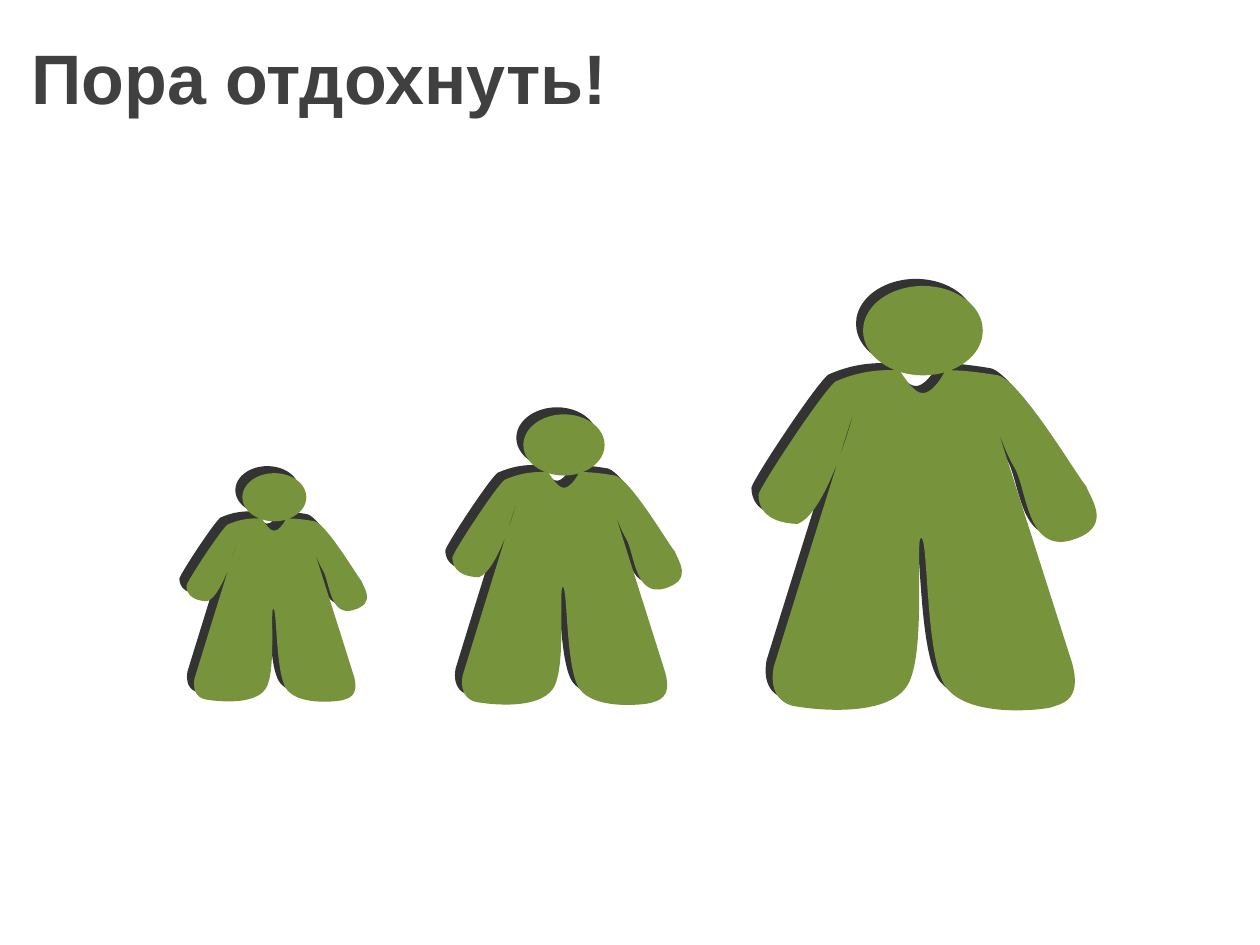
import dataclasses

import lxml.etree
import pptx
import pptx.dml.color
import pptx.enum.shapes
import pptx.enum.text
import pptx.oxml.ns
import pptx.util

Cm = pptx.util.Cm
qn = pptx.oxml.ns.qn

GREEN = "77933C"
GREY = "404040"
SHADE = "333333"
WIDE, HIGH = 283, 275
START = (148, 1)
CURVES = [
    ((145, 9), (136, 20), (130, 19)),
    ((124, 19), (117, 9), (112, 1)),
    ((92, 0), (77, 3), (61, 10)),
    ((50, 19), (0, 95), (0, 100)),
    ((0, 106), (2, 122), (31, 123)),
    ((55, 114), (76, 33), (76, 33)),
    ((69, 53), (12, 237), (12, 237)),
    ((8, 260), (21, 267), (30, 268)),
    ((48, 271), (100, 276), (117, 253)),
    ((134, 231), (124, 134), (129, 134)),
    ((135, 134), (132, 230), (149, 253)),
    ((166, 275), (214, 272), (231, 269)),
    ((240, 266), (257, 264), (249, 234)),
    ((249, 234), (185, 33), (185, 33)),
    ((177, 7), (192, 61), (203, 78)),
    ((213, 95), (213, 146), (248, 136)),
    ((282, 126), (264, 104), (260, 93)),
    ((254, 87), (209, 10), (190, 5)),
    ((161, 0), (148, 1), (148, 1)),
]
HEAD = (83, -66, 95, 71)


@dataclasses.dataclass
class Figure:
    left: float
    top: float
    width: float
    height: float


FIGURES = [
    Figure(9.12, 9.5, 4.88, 4.78),
    Figure(15.29, 7.44, 7.19, 6.98),
    Figure(3.76, 10.44, 3.84, 3.76),
]


def color(code: str) -> pptx.dml.color.RGBColor:
    return pptx.dml.color.RGBColor.from_string(code)


def paint(shape) -> None:
    shape.fill.solid()
    shape.fill.fore_color.rgb = color(GREEN)
    shape.line.fill.background()
    shape.shadow.inherit = False
    effects = shape._element.spPr.find(qn("a:effectLst"))
    shadow = lxml.etree.SubElement(
        effects, qn("a:outerShdw"), blurRad="0", dist=str(pptx.util.Pt(5.7)),
        dir=str(225 * 60000), algn="ctr", rotWithShape="0")
    lxml.etree.SubElement(shadow, qn("a:srgbClr"), val=SHADE)


def bend(shape) -> None:
    lines = list(shape._element.iter(qn("a:lnTo")))
    for first in range(0, len(lines), 3):
        trio = lines[first:first + 3]
        curve = trio[0].makeelement(qn("a:cubicBezTo"))
        trio[0].addprevious(curve)
        for line in trio:
            curve.append(line[0])
            line.getparent().remove(line)


def draw(slide, figure: Figure) -> None:
    shapes = slide.shapes.add_group_shape().shapes
    left, top = Cm(figure.left), Cm(figure.top)
    across, down = Cm(figure.width) / WIDE, Cm(figure.height) / HIGH

    outline = shapes.build_freeform(*START, scale=(across, down))
    outline.add_line_segments([point for curve in CURVES for point in curve])
    body = outline.convert_to_shape(left, top)
    bend(body)
    paint(body)

    x, y, width, height = HEAD
    head = shapes.add_shape(
        pptx.enum.shapes.MSO_SHAPE.OVAL,
        round(left + x * across), round(top + y * down),
        round(width * across), round(height * down))
    paint(head)


def title(slide, text: str) -> None:
    box = slide.shapes.add_textbox(Cm(0), Cm(0.05), Cm(25.4), Cm(2.97))
    frame = box.text_frame
    frame.word_wrap = True
    frame.vertical_anchor = pptx.enum.text.MSO_ANCHOR.MIDDLE
    frame.margin_left = Cm(0.64)
    frame.text = text
    font = frame.paragraphs[0].runs[0].font
    font.name = "Arial"
    font.size = pptx.util.Pt(40)
    font.bold = True
    font.color.rgb = color(GREY)


def main() -> None:
    deck = pptx.Presentation()
    deck.slide_width, deck.slide_height = Cm(25.4), Cm(19.05)
    slide = deck.slides.add_slide(deck.slide_layouts[6])
    title(slide, "Пора отдохнуть!")
    for figure in FIGURES:
        draw(slide, figure)
    deck.save("out.pptx")


if __name__ == "__main__":
    main()
